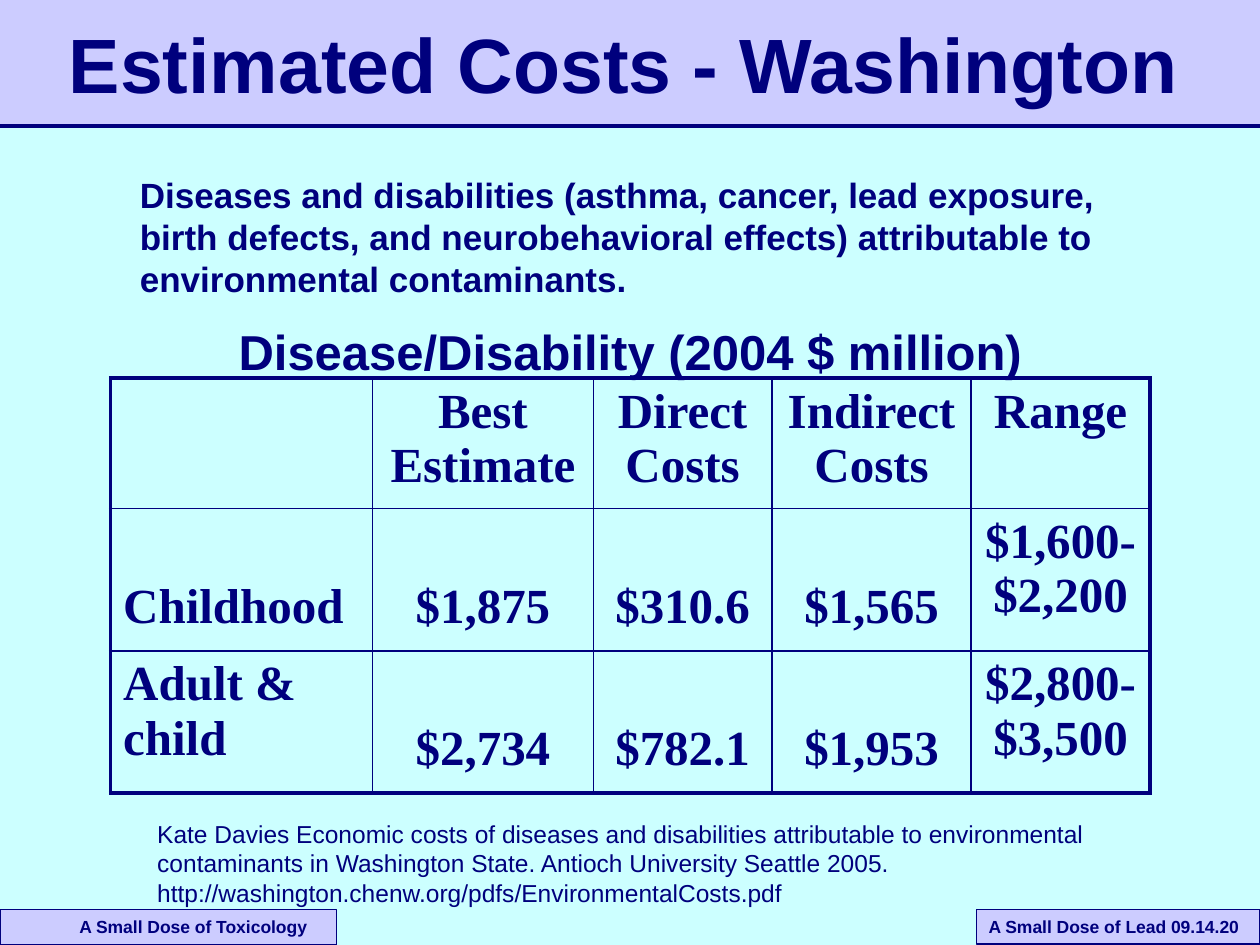
import pptx
import pptx.util
import pptx.dml.color
import pptx.enum.shapes
import pptx.enum.text
import pptx.oxml.ns
import lxml.etree

Cm = pptx.util.Cm
Pt = pptx.util.Pt
ALIGN = pptx.enum.text.PP_ALIGN
ANCHOR = pptx.enum.text.MSO_ANCHOR
NAVY = "00007D"
LAVENDER = "CCCCFF"
AQUA = "CCFFFF"


def colour(value):
    return pptx.dml.color.RGBColor.from_string(value)


def add_element(parent, tag, **attributes):
    return lxml.etree.SubElement(parent, pptx.oxml.ns.qn(tag), **attributes)


class SlideBuilder:
    sans = "Arial"
    serif = "Times New Roman"

    def __init__(self, slide):
        self.slide = slide
        slide.background.fill.solid()
        slide.background.fill.fore_color.rgb = colour(AQUA)

    def set_text(self, frame, text, size, font, bold=True, align=ALIGN.LEFT):
        frame.word_wrap = True
        paragraph = frame.paragraphs[0]
        paragraph.text = text
        paragraph.alignment = align
        paragraph.font.size = Pt(size)
        paragraph.font.name = font
        paragraph.font.bold = bold
        paragraph.font.color.rgb = colour(NAVY)

    def text(self, box, text, size, bold=True, align=ALIGN.LEFT, anchor=ANCHOR.TOP):
        shape = self.slide.shapes.add_textbox(*map(Cm, box))
        shape.text_frame.vertical_anchor = anchor
        self.set_text(shape.text_frame, text, size, self.sans, bold, align)

    def panel(self, box, outlined=True):
        shape = self.slide.shapes.add_shape(
            pptx.enum.shapes.MSO_SHAPE.RECTANGLE, *map(Cm, box))
        shape.shadow.inherit = False
        shape.fill.solid()
        shape.fill.fore_color.rgb = colour(LAVENDER)
        if outlined:
            shape.line.color.rgb = colour(NAVY)
            shape.line.width = Pt(0.75)
        else:
            shape.line.fill.background()
        return shape

    def footer(self, box, text, indent):
        frame = self.panel(box).text_frame
        frame.margin_left = Cm(indent)
        frame.vertical_anchor = ANCHOR.TOP
        self.set_text(frame, text, 10, self.sans)

    def rule(self, left, right, top, width):
        connector = self.slide.shapes.add_connector(
            pptx.enum.shapes.MSO_CONNECTOR.STRAIGHT,
            Cm(left), Cm(top), Cm(right), Cm(top))
        connector.line.color.rgb = colour(NAVY)
        connector.line.width = Pt(width)
        add_element(connector._element.spPr, "a:effectLst")

    def borders(self, cell, outer_sides):
        properties = cell._tc.get_or_add_tcPr()
        for side, is_outer in outer_sides.items():
            width = Pt(2.25 if is_outer else 1)
            line = add_element(properties, f"a:ln{side}", w=str(width))
            fill = add_element(line, "a:solidFill")
            add_element(fill, "a:srgbClr", val=NAVY)

    def table(self, left, top, widths, heights, rows):
        table = self.slide.shapes.add_table(
            len(heights), len(widths), Cm(left), Cm(top),
            Cm(sum(widths)), Cm(sum(heights))).table
        table.first_row = False
        table.horz_banding = False
        for column, width in zip(table.columns, widths):
            column.width = Cm(width)
        last_row, last_column = len(heights) - 1, len(widths) - 1
        for i, (height, texts) in enumerate(zip(heights, rows)):
            table.rows[i].height = Cm(height)
            for j, text in enumerate(texts):
                cell = table.cell(i, j)
                lowered = i > 0 and (0 < j < last_column or text == "Childhood")
                cell.margin_top = Cm(1.43 if lowered else 0.13)
                self.borders(cell, {"L": j == 0, "R": j == last_column,
                                    "T": i == 0, "B": i == last_row})
                cell.fill.background()
                self.set_text(cell.text_frame, text, 28, self.serif,
                              align=ALIGN.CENTER if j else ALIGN.LEFT)


def main():
    presentation = pptx.Presentation()
    presentation.slide_width = Cm(25.4)
    presentation.slide_height = Cm(19.05)
    builder = SlideBuilder(presentation.slides.add_slide(presentation.slide_layouts[6]))

    builder.panel((0, 0, 25.4, 2.54), outlined=False)
    builder.rule(0, 25.4, 2.54, 2)
    builder.footer((0, 18.34, 6.78, 0.71), "A Small Dose of Toxicology", 1.6)
    builder.footer((19.68, 18.34, 5.72, 0.69), "A Small Dose of Lead 09.14.20", 0.25)
    builder.text((0.91, 0.2, 23.34, 2.11), "Estimated Costs - Washington", 44,
                 align=ALIGN.CENTER, anchor=ANCHOR.MIDDLE)
    builder.text((2.57, 3.38, 20.27, 2.79),
                 "Diseases and disabilities (asthma, cancer, lead exposure, birth defects, "
                 "and neurobehavioral effects) attributable to environmental contaminants.", 20)
    builder.table(2.23, 7.62, [5.28, 4.45, 3.6, 4.02, 3.6], [2.62, 2.87, 2.87], [
        ["", "Best Estimate", "Direct Costs", "Indirect Costs", "Range"],
        ["Childhood", "$1,875", "$310.6", "$1,565", "$1,600-$2,200"],
        ["Adult & child", "$2,734", "$782.1", "$1,953", "$2,800-$3,500"],
    ])
    builder.text((2.57, 6.35, 20.27, 1.45), "Disease/Disability (2004 $ million)", 28,
                 align=ALIGN.CENTER)
    builder.text((2.92, 16.38, 19.51, 2.03),
                 "Kate Davies Economic costs of diseases and disabilities attributable to "
                 "environmental contaminants in Washington State. Antioch University Seattle "
                 "2005. http://washington.chenw.org/pdfs/EnvironmentalCosts.pdf", 14, bold=False)
    presentation.save("out.pptx")


if __name__ == "__main__":
    main()
